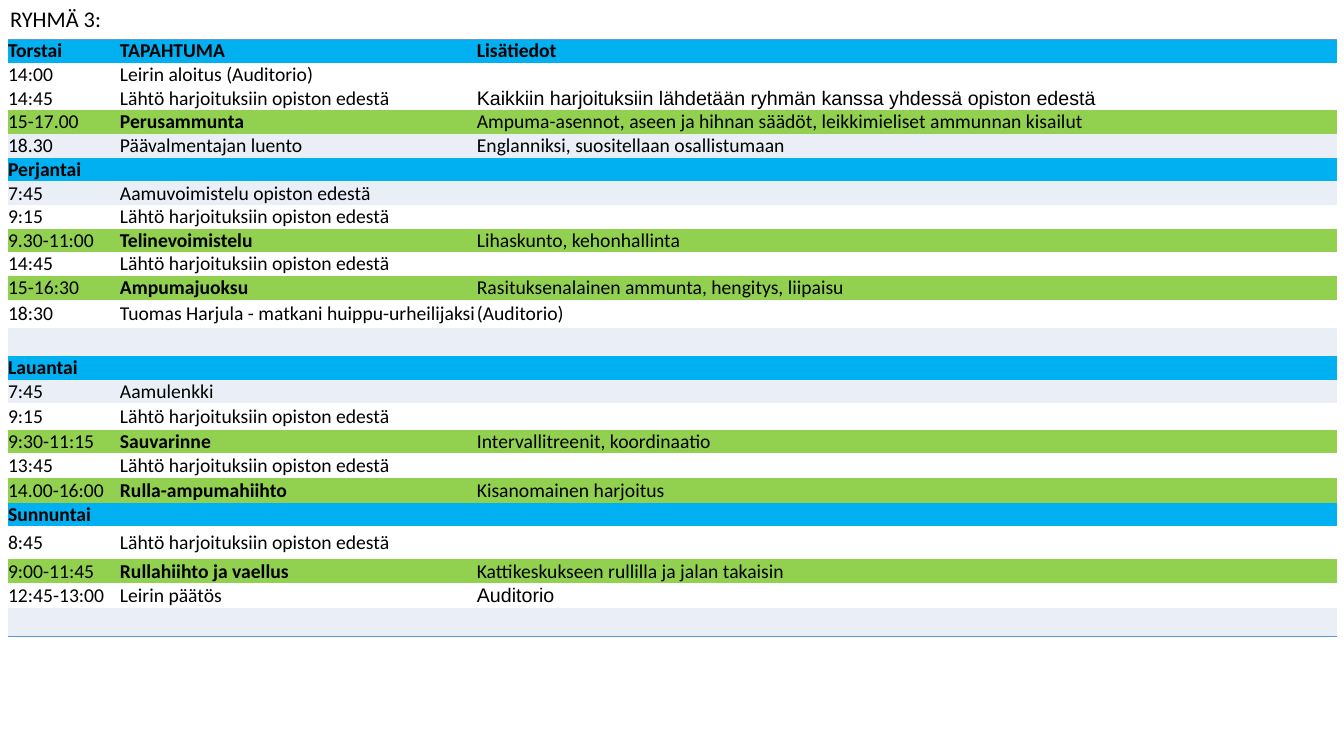
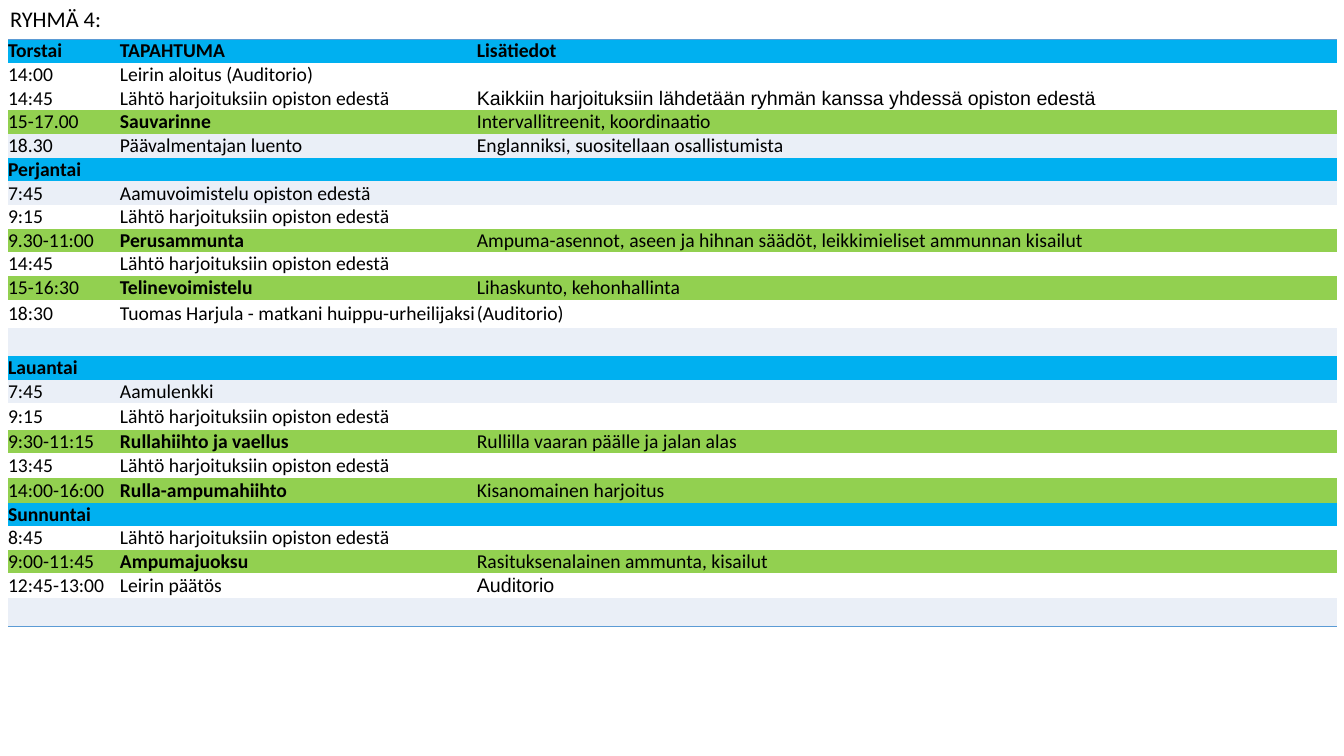
from lxml import etree
from pptx import Presentation
from pptx.dml.color import RGBColor
from pptx.enum import text
from pptx.oxml import ns
from pptx.util import Inches, Pt

BLACK = "000000"
EDGE = "5B9BD5"
FILLS = {"day": "00B0F0", "drill": "92D050", "tint": "EAEFF7", "plain": None}
NO_STYLE = "{2D5ABB26-0587-4C30-8999-92F81FD0307C}"
COLUMN_WIDTHS = (1.11, 3.54, 8.53)
TABLE_LEFT, TABLE_TOP = 0.08, 0.39

DEPARTURE = "Lähtö harjoituksiin opiston edestä"
MEETING_NOTE = "Kaikkiin harjoituksiin lähdetään ryhmän kanssa yhdessä opiston edestä"
HALL = "Auditorio"
ARIAL_NOTES = (MEETING_NOTE, HALL)

SHOOTING = ("Perusammunta",
            "Ampuma-asennot, aseen ja hihnan säädöt, leikkimieliset ammunnan kisailut")
GYMNASTICS = ("Telinevoimistelu", "Lihaskunto, kehonhallinta")
POLE_HILL = ("Sauvarinne", "Intervallitreenit, koordinaatio")
ROLLER_BIATHLON = ("Rulla-ampumahiihto", "Kisanomainen harjoitus")
RUN, ROLLER_HIKE = "Ampumajuoksu", "Rullahiihto ja vaellus"

GROUPS = [
    {
        "title": "RYHMÄ 3:",
        "lecture_note": "Englanniksi, suositellaan osallistumaan",
        "biathlon_time": "14.00-16:00",
        "sunday_height": 0.33,
        "drills": [SHOOTING, GYMNASTICS,
                   (RUN, "Rasituksenalainen ammunta, hengitys, liipaisu"),
                   POLE_HILL,
                   (ROLLER_HIKE, "Kattikeskukseen rullilla ja jalan takaisin")],
    },
    {
        "title": "RYHMÄ 4:",
        "lecture_note": "Englanniksi, suositellaan osallistumista",
        "biathlon_time": "14:00-16:00",
        "sunday_height": 0.23,
        "drills": [POLE_HILL, SHOOTING, GYMNASTICS,
                   (ROLLER_HIKE, "Rullilla vaaran päälle ja jalan alas"),
                   (RUN, "Rasituksenalainen ammunta, kisailut")],
    },
]


def schedule(group):
    """Return the rows of a group as (kind, height, cell texts)."""
    thursday, friday_am, friday_pm, saturday, sunday = group["drills"]
    return [
        ("day", 0.23, ("Torstai", "TAPAHTUMA", "Lisätiedot")),
        ("plain", 0.23, ("14:00", "Leirin aloitus (Auditorio)", "")),
        ("plain", 0.23, ("14:45", DEPARTURE, MEETING_NOTE)),
        ("drill", 0.23, ("15-17.00", *thursday)),
        ("tint", 0.24, ("18.30", "Päävalmentajan luento", group["lecture_note"])),
        ("day", 0.23, ("Perjantai", "", "")),
        ("tint", 0.23, ("7:45", "Aamuvoimistelu opiston edestä", "")),
        ("plain", 0.23, ("9:15", DEPARTURE, "")),
        ("drill", 0.23, ("9.30-11:00", *friday_am)),
        ("plain", 0.24, ("14:45", DEPARTURE, "")),
        ("drill", 0.22, ("15-16:30", *friday_pm)),
        ("plain", 0.28, ("18:30", "Tuomas Harjula - matkani huippu-urheilijaksi",
                         "(Auditorio)")),
        ("tint", 0.28, ("", "", "")),
        ("day", 0.23, ("Lauantai", "", "")),
        ("tint", 0.23, ("7:45", "Aamulenkki", "")),
        ("plain", 0.26, ("9:15", DEPARTURE, "")),
        ("drill", 0.23, ("9:30-11:15", *saturday)),
        ("plain", 0.25, ("13:45", DEPARTURE, "")),
        ("drill", 0.24, (group["biathlon_time"], *ROLLER_BIATHLON)),
        ("day", 0.23, ("Sunnuntai", "", "")),
        ("plain", group["sunday_height"], ("8:45", DEPARTURE, "")),
        ("drill", 0.23, ("9:00-11:45", *sunday)),
        ("plain", 0.25, ("12:45-13:00", "Leirin päätös", HALL)),
        ("tint", 0.28, ("", "", "")),
    ]


def color(value):
    return RGBColor.from_string(value)


def set_font(paragraph, size, name="Calibri", bold=False):
    font = paragraph.font
    font.size, font.name, font.bold = Pt(size), name, bold
    font.color.rgb = color(BLACK)


def add_edge(cell, side):
    """Draw a 1 pt border; side is lnT or lnB."""
    line = etree.Element(ns.qn("a:" + side), w=str(Pt(1)))
    fill = etree.SubElement(line, ns.qn("a:solidFill"))
    etree.SubElement(fill, ns.qn("a:srgbClr"), val=EDGE)
    cell._tc.get_or_add_tcPr().insert(0, line)


def fill_cell(cell, kind, column, content):
    cell.margin_left = cell.margin_right = cell.margin_top = cell.margin_bottom = 0
    cell.vertical_anchor = text.MSO_ANCHOR.MIDDLE
    cell.text = content
    bold = kind == "day" or (kind == "drill" and column == 1)
    name = "Arial" if content in ARIAL_NOTES else "Calibri"
    set_font(cell.text_frame.paragraphs[0], 14, name, bold)
    if FILLS[kind]:
        cell.fill.solid()
        cell.fill.fore_color.rgb = color(FILLS[kind])
    else:
        cell.fill.background()


def add_title(slide, content):
    title = slide.shapes.title
    title.left, title.top = Inches(0), Inches(0)
    title.width, title.height = Inches(8.99), Inches(0.37)
    frame = title.text_frame
    frame.text = content
    frame.word_wrap = True
    frame.auto_size = text.MSO_AUTO_SIZE.SHAPE_TO_FIT_TEXT
    frame.vertical_anchor = text.MSO_ANCHOR.TOP
    paragraph = frame.paragraphs[0]
    paragraph.alignment = text.PP_ALIGN.LEFT
    set_font(paragraph, 16)


def add_schedule(slide, rows):
    frame = slide.shapes.add_table(
        len(rows), len(COLUMN_WIDTHS), Inches(TABLE_LEFT), Inches(TABLE_TOP),
        Inches(sum(COLUMN_WIDTHS)), Inches(sum(height for _, height, _ in rows)))
    table = frame.table
    table.first_row = table.horz_banding = False
    table._tbl.tblPr.find(ns.qn("a:tableStyleId")).text = NO_STYLE
    for column, width in zip(table.columns, COLUMN_WIDTHS):
        column.width = Inches(width)
    for index, (kind, height, contents) in enumerate(rows):
        table.rows[index].height = Inches(height)
        for column, content in enumerate(contents):
            fill_cell(table.cell(index, column), kind, column, content)
    for column in range(len(COLUMN_WIDTHS)):
        add_edge(table.cell(0, column), "lnT")
        add_edge(table.cell(len(rows) - 1, column), "lnB")


def main():
    presentation = Presentation()
    presentation.slide_width, presentation.slide_height = Inches(13.33), Inches(7.5)
    title_only = presentation.slide_layouts[5]
    for group in GROUPS:
        slide = presentation.slides.add_slide(title_only)
        add_title(slide, group["title"])
        add_schedule(slide, schedule(group))
    presentation.save("out.pptx")


if __name__ == "__main__":
    main()
